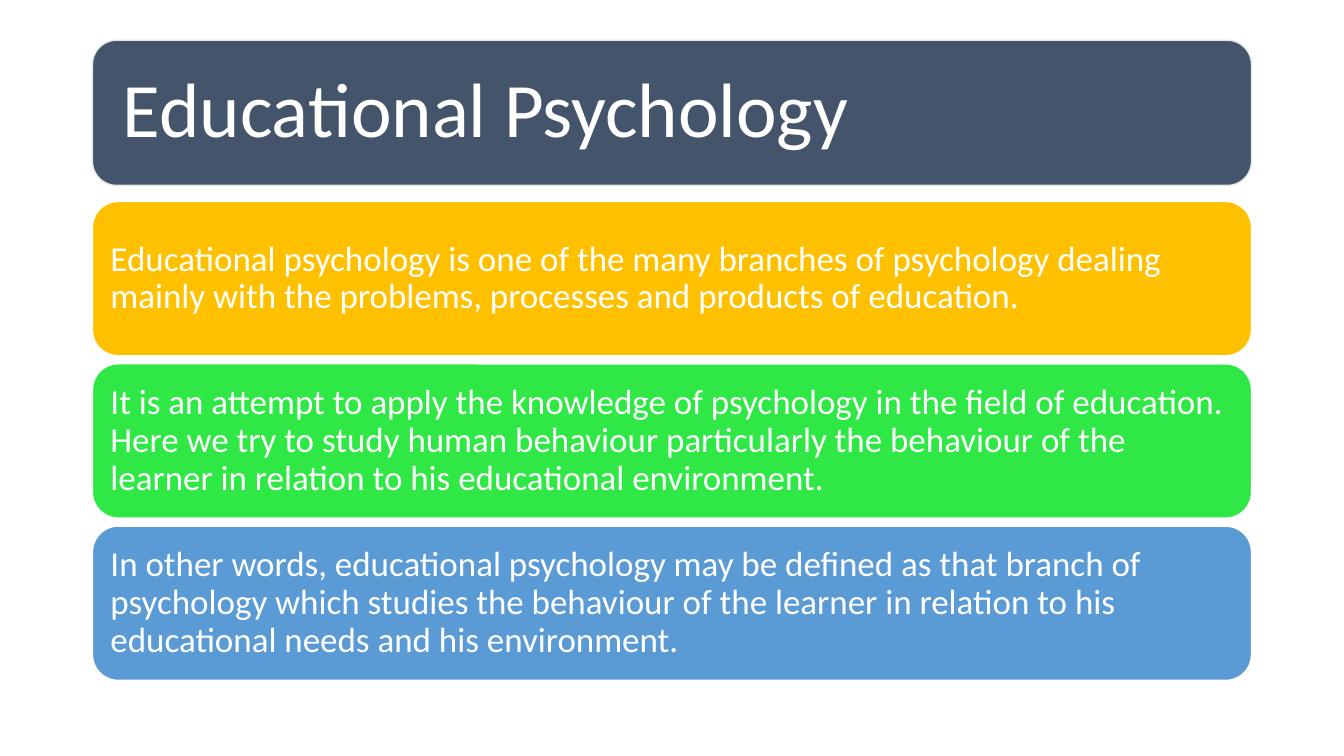
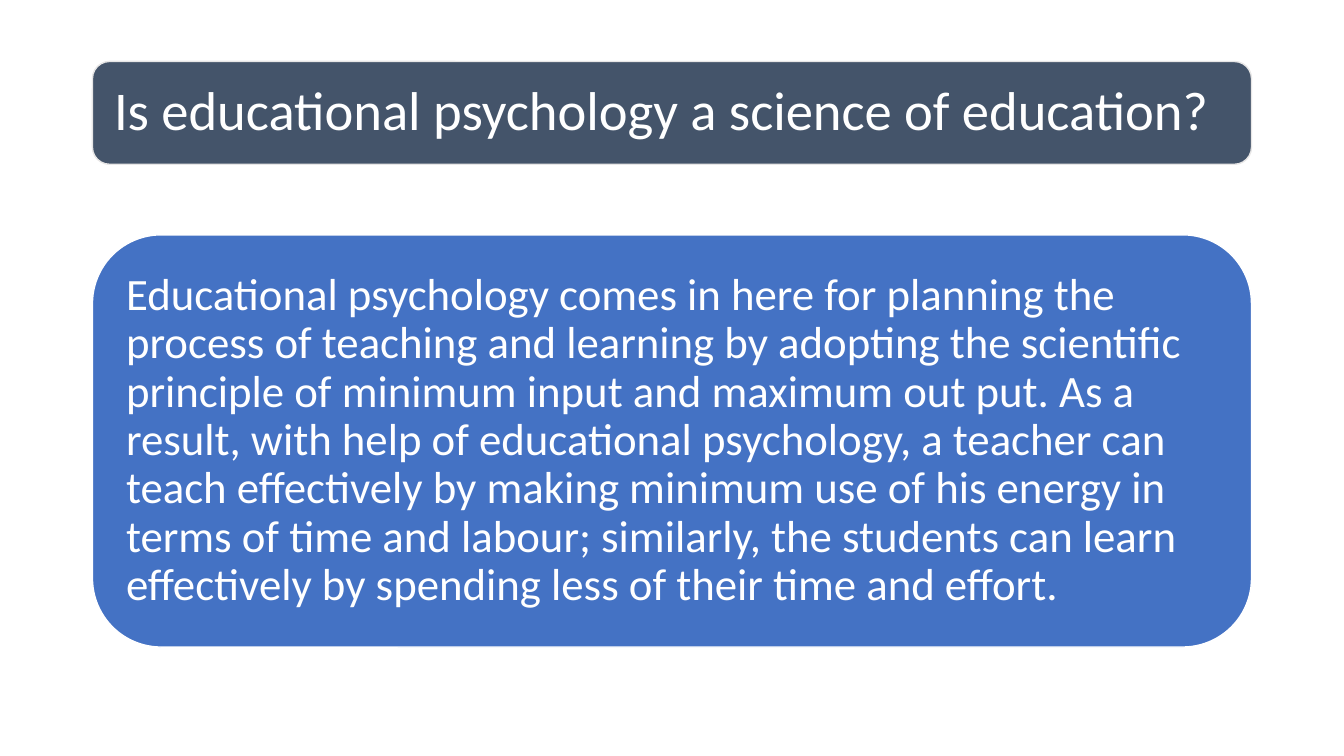
"""Build two slides on educational psychology with stacked rounded panels."""
import pptx
import pptx.dml.color
import pptx.enum.shapes
import pptx.enum.text
import pptx.util

RGBColor = pptx.dml.color.RGBColor
WHITE = RGBColor(0xFF, 0xFF, 0xFF)
SLATE = RGBColor(0x44, 0x54, 0x6A)
PALE_GREY = RGBColor(0xE7, 0xE6, 0xE6)
AMBER = RGBColor(0xFF, 0xC0, 0x00)
GREEN = RGBColor(0x30, 0xE8, 0x45)
SKY = RGBColor(0x5B, 0x9B, 0xD5)
BLUE = RGBColor(0x44, 0x72, 0xC4)

SLIDE_WIDTH = pptx.util.Inches(13.33)
SLIDE_HEIGHT = pptx.util.Inches(7.5)
COLUMN = SLIDE_WIDTH / 100
ROW = SLIDE_HEIGHT / 100

PANEL_LEFT = 6.88 * COLUMN
PANEL_WIDTH = SLIDE_WIDTH - 2 * PANEL_LEFT
TITLE_MIDDLE = 14.93
BODY_MIDDLE = 58.33
PANEL_GAP = 1.07
CORNER_INSET = 0.05
TEXT_INSET = 0.3

TITLE_ONLY = 5
FONT = "Calibri"

SLIDES = [
    {
        "title": "Educational Psychology",
        "title_rows": 19.2,
        "title_size": 55,
        "panel_rows": 20.4,
        "panel_size": 25,
        "panels": [
            (AMBER, "Educational psychology is one of the many branches of "
                    "psychology dealing mainly with the problems, processes "
                    "and products of education."),
            (GREEN, "It is an attempt to apply the knowledge of psychology in "
                    "the field of education. Here we try to study human "
                    "behaviour particularly the behaviour of the learner in "
                    "relation to his educational environment."),
            (SKY, "In other words, educational psychology may be defined as "
                  "that branch of psychology which studies the behaviour of "
                  "the learner in relation to his educational needs and his "
                  "environment."),
        ],
    },
    {
        "title": "Is educational psychology a science of education?",
        "title_rows": 13.6,
        "title_size": 39,
        "panel_rows": 54.53,
        "panel_size": 32,
        "panels": [
            (BLUE, "Educational psychology comes in here for planning the "
                   "process of teaching and learning by adopting the "
                   "scientific principle of minimum input and maximum out "
                   "put. As a result, with help of educational psychology, a "
                   "teacher can teach effectively by making minimum use of "
                   "his energy in terms of time and labour; similarly, the "
                   "students can learn effectively by spending less of their "
                   "time and effort."),
        ],
    },
]


def apply_format(target, values):
    """Set each named attribute of the target to its value."""
    for name, value in values.items():
        setattr(target, name, value)


def write_text(holder, text, size):
    """Write one white, left-aligned, vertically centred paragraph."""
    inset = pptx.util.Pt(size * TEXT_INSET)
    frame = holder.text_frame
    frame.text = text
    apply_format(frame, {
        "word_wrap": True,
        "auto_size": pptx.enum.text.MSO_AUTO_SIZE.NONE,
        "vertical_anchor": pptx.enum.text.MSO_ANCHOR.MIDDLE,
        "margin_left": inset,
        "margin_right": inset,
        "margin_top": inset,
        "margin_bottom": inset,
    })
    paragraph = frame.paragraphs[0]
    apply_format(paragraph, {
        "alignment": pptx.enum.text.PP_ALIGN.LEFT,
        "line_spacing": 0.9,
    })
    font = paragraph.runs[0].font
    apply_format(font, {"name": FONT, "size": pptx.util.Pt(size)})
    font.color.rgb = WHITE


def add_panel(slide, top, rows, fill, outline):
    """Add a full-width rounded panel at the given row."""
    panel = slide.shapes.add_shape(
        pptx.enum.shapes.MSO_SHAPE.ROUNDED_RECTANGLE,
        round(PANEL_LEFT), round(top * ROW),
        round(PANEL_WIDTH), round(rows * ROW))
    panel.shadow.inherit = False
    panel.fill.solid()
    panel.fill.fore_color.rgb = fill
    panel.line.color.rgb = outline
    panel.line.width = pptx.util.Pt(1)
    return panel


def add_title(slide, text, rows, size):
    """Place the title on a slate band that lies behind it."""
    band = add_panel(slide, TITLE_MIDDLE - rows / 2, rows, SLATE, PALE_GREY)
    title = slide.shapes.title
    title._element.addprevious(band._element)
    inset = round(band.height * CORNER_INSET)
    apply_format(title, {
        "left": band.left + inset,
        "top": band.top + inset,
        "width": band.width - 2 * inset,
        "height": band.height - 2 * inset,
    })
    write_text(title, text, size)


def add_panel_stack(slide, panels, rows, size):
    """Stack equal text panels around the middle of the body."""
    pitch = rows + PANEL_GAP
    first_top = BODY_MIDDLE - (len(panels) * pitch - PANEL_GAP) / 2
    for index, (fill, text) in enumerate(panels):
        panel = add_panel(slide, first_top + index * pitch, rows, fill, WHITE)
        write_text(panel, text, size)


def main():
    """Build and save the presentation."""
    presentation = pptx.Presentation()
    apply_format(presentation, {
        "slide_width": SLIDE_WIDTH,
        "slide_height": SLIDE_HEIGHT,
    })
    layout = presentation.slide_layouts[TITLE_ONLY]
    for content in SLIDES:
        slide = presentation.slides.add_slide(layout)
        add_title(slide, content["title"], content["title_rows"],
                  content["title_size"])
        add_panel_stack(slide, content["panels"], content["panel_rows"],
                        content["panel_size"])
    presentation.save("out.pptx")


if __name__ == "__main__":
    main()
